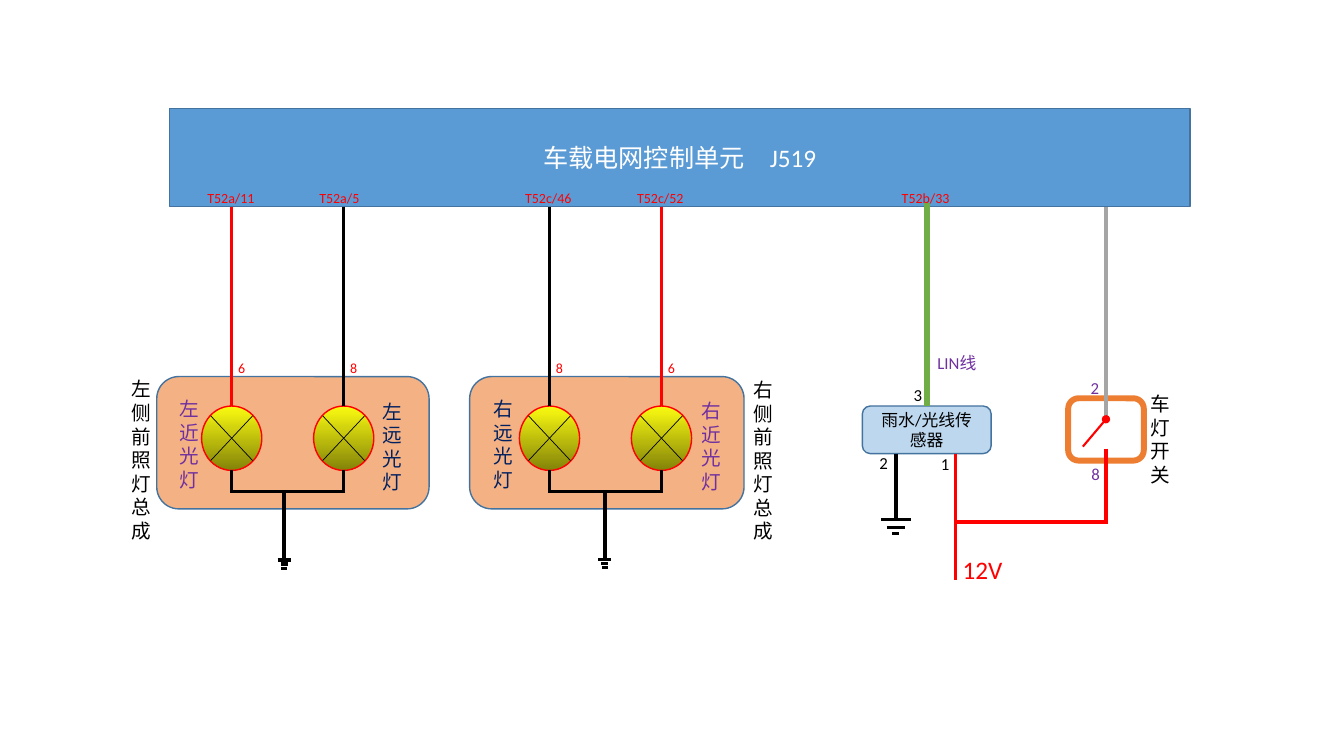
from lxml.etree import SubElement
from pptx import Presentation
from pptx.dml.color import RGBColor
from pptx.enum.shapes import MSO_CONNECTOR, MSO_SHAPE
from pptx.enum.text import MSO_ANCHOR, PP_ALIGN
from pptx.oxml.ns import qn
from pptx.util import Pt

BLACK = RGBColor(0x00, 0x00, 0x00)
WHITE = RGBColor(0xFF, 0xFF, 0xFF)
RED = RGBColor(0xFF, 0x00, 0x00)
GREEN = RGBColor(0x70, 0xAD, 0x47)
GREY = RGBColor(0xA5, 0xA5, 0xA5)
ORANGE = RGBColor(0xED, 0x7D, 0x31)
PEACH = RGBColor(0xF4, 0xB1, 0x83)
BLUE = RGBColor(0x5B, 0x9B, 0xD5)
PALE_BLUE = RGBColor(0xBD, 0xD7, 0xEE)
OUTLINE = RGBColor(0x43, 0x73, 0x9E)
PURPLE = RGBColor(0x70, 0x30, 0xA0)
NAVY = RGBColor(0x00, 0x20, 0x60)
LAMP_TOP = RGBColor(0xFB, 0xFB, 0x11)
LAMP_BOTTOM = RGBColor(0x83, 0x83, 0x09)

UNIT_BOTTOM = 147.6
LAMP_Y, LAMP_WIDTH, LAMP_HEIGHT = 290, 43, 46
BUS_Y = 351


class WiringDiagram:
    font_name = "Calibri"
    wire_width = 2.5

    def __init__(self, slide):
        self.shapes = slide.shapes

    def set_text(self, shape, text, size, color):
        text_frame = shape.text_frame
        text_frame.word_wrap = True
        text_frame.text = text
        for run in text_frame.paragraphs[0].runs:
            run.font.name = self.font_name
            run.font.size = Pt(size)
            run.font.color.rgb = color

    def label(self, text, left, top, width, height, size, color):
        box = self.shapes.add_textbox(Pt(left), Pt(top), Pt(width), Pt(height))
        self.set_text(box, text, size, color)

    def vertical_label(self, text, left, top, color):
        """Box so narrow that every character takes its own line."""
        self.label(text, left, top, 16, 16.8 * len(text) + 7.2, 14, color)

    def block(self, kind, left, top, width, height, fill=None, line=OUTLINE,
              line_width=1, shapes=None):
        shape = (shapes or self.shapes).add_shape(
            kind, Pt(left), Pt(top), Pt(width), Pt(height))
        shape.shadow.inherit = False
        if fill is None:
            shape.fill.background()
        else:
            shape.fill.solid()
            shape.fill.fore_color.rgb = fill
        shape.line.color.rgb = line
        shape.line.width = Pt(line_width)
        return shape

    def caption(self, shape, text, size, color):
        self.set_text(shape, text, size, color)
        shape.text_frame.vertical_anchor = MSO_ANCHOR.MIDDLE
        shape.text_frame.paragraphs[0].alignment = PP_ALIGN.CENTER

    def wire(self, x1, y1, x2, y2, color=BLACK, width=wire_width, shapes=None):
        connector = (shapes or self.shapes).add_connector(
            MSO_CONNECTOR.STRAIGHT, Pt(x1), Pt(y1), Pt(x2), Pt(y2))
        connector.line.color.rgb = color
        connector.line.width = Pt(width)
        SubElement(connector._element.spPr, qn("a:effectLst"))
        return connector

    def lamp(self, x):
        # An empty group's shapes are falsy, so the bulb comes first.
        shapes = self.shapes.add_group_shape().shapes
        bulb = self.block(MSO_SHAPE.OVAL, x - LAMP_WIDTH / 2, LAMP_Y, LAMP_WIDTH,
                          LAMP_HEIGHT, LAMP_TOP, RED, shapes=shapes)
        bulb.fill.gradient()
        bulb.fill.gradient_angle = 270
        for stop, color in zip(bulb.fill.gradient_stops, (LAMP_TOP, LAMP_BOTTOM)):
            stop.color.rgb = color
        middle = LAMP_Y + LAMP_HEIGHT / 2
        for rise in (16, -16):
            self.wire(x - 15, middle - rise, x + 15, middle + rise, BLACK, 0.5, shapes)
        return bulb

    def ground(self, x, bars, width):
        """Bars are (y, length) pairs centred on x."""
        shapes = self.shapes.add_group_shape().shapes
        for y, length in bars:
            self.wire(x - length / 2, y, x + length / 2, y, BLACK, width, shapes)

    def headlight(self, left, width, ground_x, ground_y, lamps):
        """Lamps are (x, wire colour, pin, unit terminal) tuples."""
        self.block(MSO_SHAPE.ROUNDED_RECTANGLE, left, 269, width, 94.5, PEACH)
        for x, color, pin, terminal in lamps:
            bulb = self.lamp(x)
            self.wire(x, LAMP_Y + LAMP_HEIGHT, x, BUS_Y)
            self.wire(x + (1 if x > ground_x else -1), BUS_Y, ground_x, BUS_Y)
            feed = self.wire(x, UNIT_BOTTOM, x, LAMP_Y, color)
            feed.end_connect(bulb, 0)
            self.label(pin, x - 2.5, 253, 29, 12, 10, RED)
            self.label(terminal, x - 24.5, 132, 60, 14, 10, RED)
        self.wire(ground_x, BUS_Y, ground_x, ground_y)
        bars = [(ground_y + 3 * step, length)
                for step, length in enumerate((9.4, 5, 4))]
        self.ground(ground_x, bars, self.wire_width)


def draw_headlights(diagram):
    diagram.headlight(112, 194.5, 203, 400, [
        (165.5, RED, "6", "T52a/11"), (245.5, BLACK, "8", "T52a/5")])
    diagram.headlight(335.5, 196, 432, 399.5, [
        (392.5, BLACK, "8", "T52c/46"), (472.5, RED, "6", "T52c/52")])
    for text, left, top, color in (
            ("左侧前照灯总成", 87, 266, BLACK), ("右侧前照灯总成", 531.5, 266.5, BLACK),
            ("左近光灯", 121, 280, PURPLE), ("右近光灯", 494, 281.5, PURPLE),
            ("左远光灯", 266.5, 282, NAVY), ("右远光灯", 345.5, 280, NAVY)):
        diagram.vertical_label(text, left, top, color)


def draw_sensor(diagram):
    sensor = diagram.block(MSO_SHAPE.ROUNDED_RECTANGLE, 616, 290, 92, 34, PALE_BLUE)
    diagram.caption(sensor, "雨水/光线传感器", 12, BLACK)
    bus = diagram.wire(662, 145, 662, 290, GREEN, 4)
    bus.end_connect(sensor, 0)
    diagram.wire(640, 324, 640, 371)
    diagram.ground(640, [(371, 21), (376.5, 13), (381, 5)], 2.25)
    diagram.wire(682.5, 324, 682.5, 414, RED, 2.75)
    for text, left, top, width, size, color in (
            ("1", 665, 320.5, 16, 12, BLACK), ("2", 621, 320, 16, 12, BLACK),
            ("3", 645.5, 271, 21, 12, BLACK), ("LIN线", 662.5, 248.5, 54, 12, PURPLE),
            ("T52b/33", 637, 132, 54, 10, RED), ("12V", 680.5, 392.5, 58, 18, RED)):
        diagram.label(text, left, top, width, size + 7, size, color)


def draw_switch(diagram):
    x = 790
    diagram.block(MSO_SHAPE.ROUNDED_RECTANGLE, 763, 284.5, 54, 44.5,
                  line=ORANGE, line_width=4.25)
    diagram.wire(x, 320.5, x, 374, RED, 3)
    diagram.wire(682.5, 373, x + 0.5, 373, RED, 3)
    diagram.wire(x, UNIT_BOTTOM, x, 297.5, GREY, 3)
    lever = diagram.wire(773.5, 319, x, 299.5, RED, 1.5)
    line_element = lever._element.spPr.find(qn("a:ln"))
    SubElement(line_element, qn("a:tailEnd"), type="oval")
    diagram.label("2", 772, 266.5, 19, 19, 12, PURPLE)
    diagram.label("8", 772.5, 327.5, 19, 19, 12, PURPLE)
    diagram.vertical_label("车灯开关", 815, 276.5, BLACK)


def main():
    presentation = Presentation()
    presentation.slide_width = Pt(960)
    presentation.slide_height = Pt(540)
    slide = presentation.slides.add_slide(presentation.slide_layouts[6])
    diagram = WiringDiagram(slide)
    unit = diagram.block(MSO_SHAPE.RECTANGLE, 121, 77.6, 729, 70, BLUE)
    diagram.caption(unit, "车载电网控制单元　J519", 18, WHITE)
    draw_headlights(diagram)
    draw_sensor(diagram)
    draw_switch(diagram)
    presentation.save("out.pptx")


if __name__ == "__main__":
    main()
